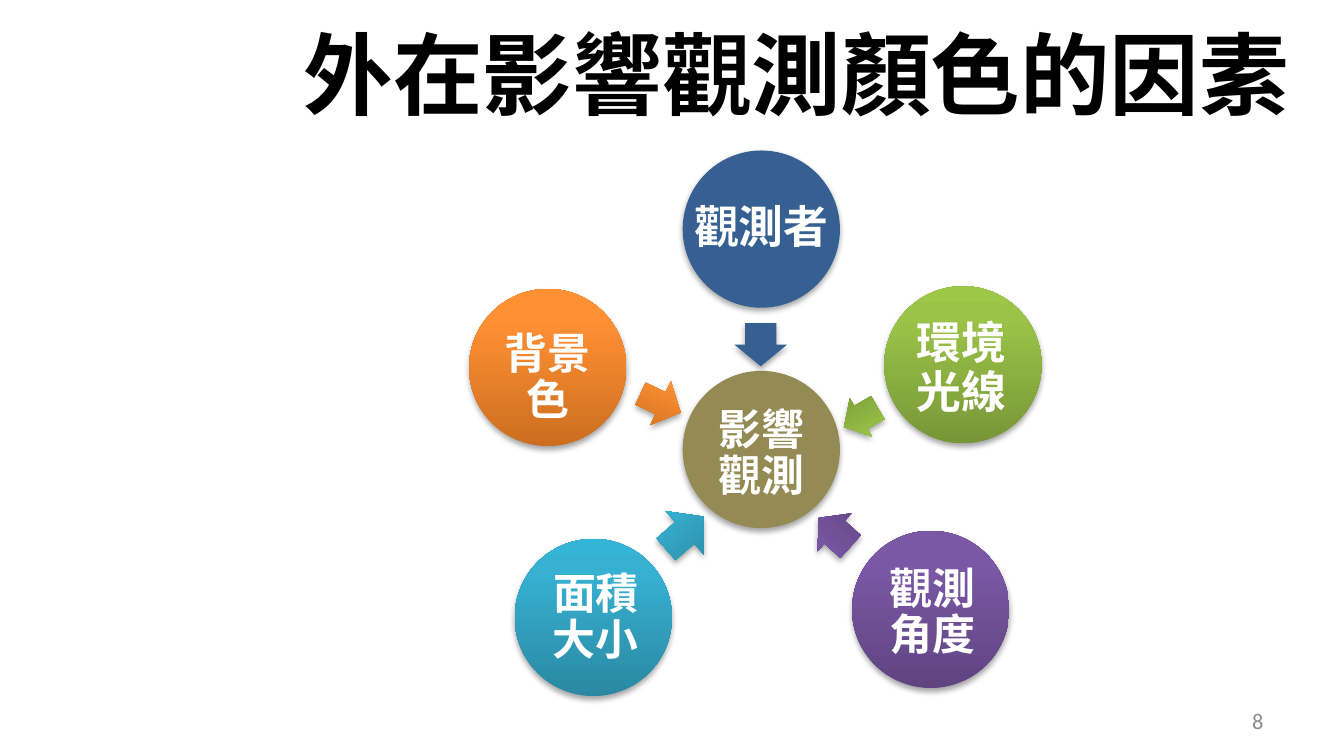
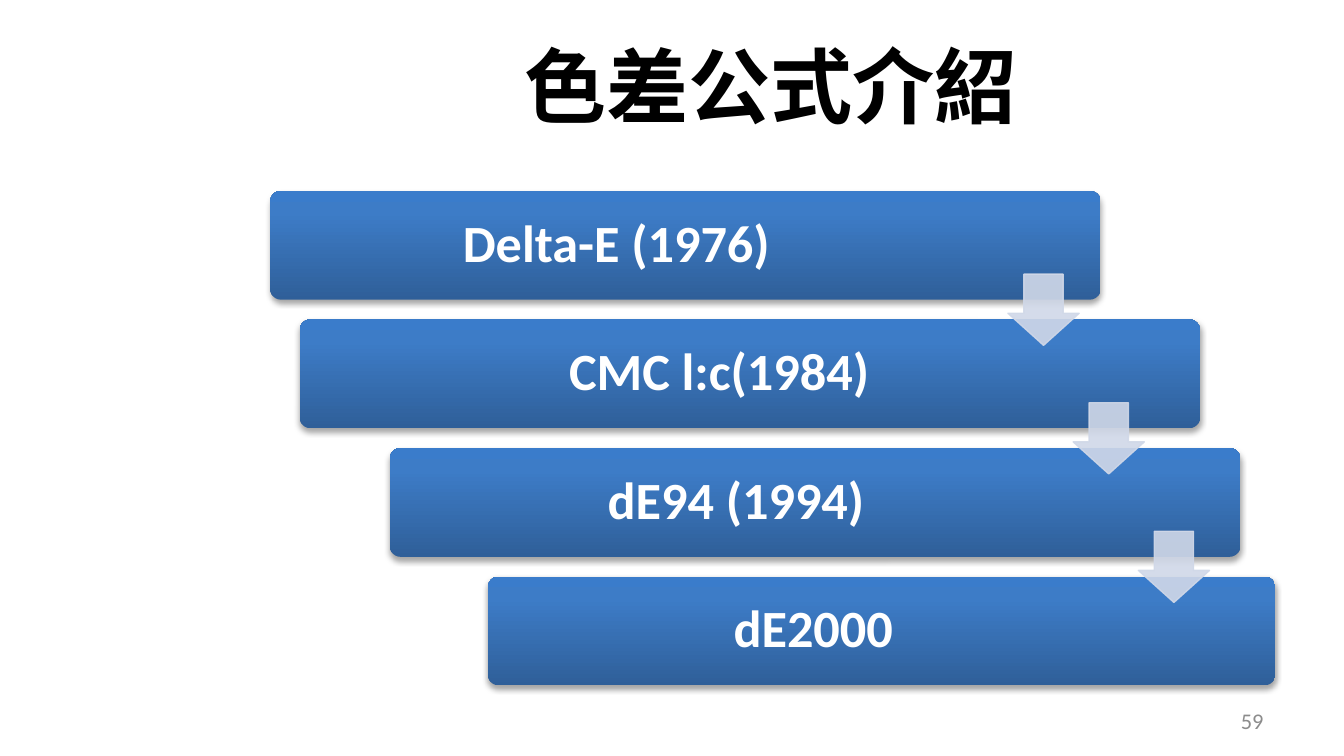
from copy import deepcopy
from collections import namedtuple
from lxml import etree
from pptx import Presentation, util as u
from pptx.dml.color import RGBColor
from pptx.enum import shapes, text
from pptx.oxml import ns

Box = namedtuple("Box", "x y w h")
Node = namedtuple("Node", "label x y fill size text_box")
Arrow = namedtuple("Arrow", "x y w h rotation fill neck")
Step = namedtuple("Step", "label x w text_w pad_left pad_right")

CELL = u.Inches(0.1)
SLIDE_W, SLIDE_H = 100, 56.25
CJK, LATIN = "Noto Sans CJK SC", "Calibri"

BLACK = RGBColor(0x00, 0x00, 0x00)
WHITE = RGBColor(0xFF, 0xFF, 0xFF)
GRAY = RGBColor(0x8C, 0x8C, 0x8C)
OLIVE = RGBColor(0x94, 0x8A, 0x54)
NAVY = RGBColor(0x37, 0x60, 0x92)
PALE = RGBColor(0xD0, 0xD8, 0xE8)
GREEN = (RGBColor(0x77, 0x97, 0x37), RGBColor(0x9B, 0xC3, 0x48), RGBColor(0x9D, 0xC7, 0x46))
PURPLE = (RGBColor(0x5F, 0x44, 0x80), RGBColor(0x7B, 0x58, 0xA6), RGBColor(0x7C, 0x57, 0xA8))
TEAL = (RGBColor(0x2A, 0x88, 0xA2), RGBColor(0x37, 0xB1, 0xD2), RGBColor(0x34, 0xB4, 0xD6))
ORANGE = (RGBColor(0xCC, 0x6E, 0x20), RGBColor(0xFF, 0x90, 0x34), RGBColor(0xFF, 0x91, 0x36))
BLUE = (RGBColor(0x2F, 0x5F, 0x99), RGBColor(0x3D, 0x7C, 0xC7), RGBColor(0x3A, 0x7C, 0xCB))
STOPS = (0, 0.8, 1)

FACTORS_BOX = Box(34.9, 11.2, 42.6, 40.6)
STEPS_BOX = Box(20.1, 14.2, 74.8, 36.8)
NUMBER_BOX = Box(71.7, 52.1, 23.3, 3)

CIRCLE = 11.7
FACTORS = [
    Node("影響觀測", 21.75, 22.25, OLIVE, 23, Box(0, 0.4, 8.3, 8.3)),
    Node("觀測者", 21.75, 5.85, NAVY, 24, Box(0, 0, 11.7, 9.5)),
    Node("環境 光線", 36.75, 15.95, GREEN, 24, Box(-0.1, 0.35, 8.5, 11.6)),
    Node("觀測角度", 34.35, 34.15, PURPLE, 23, Box(0.15, 0.3, 9.5, 9.5)),
    Node("面積大小", 9.25, 34.75, TEAL, 23, Box(0.2, 0.1, 8.3, 8.3)),
    Node("背景色", 5.85, 16.15, ORANGE, 23, Box(0, 0.8, 9.1, 7.9)),
]
ARROWS = [
    Arrow(21.7, 14.45, 3.2, 3.9, 90, NAVY, 0.6),
    Arrow(29.15, 19.85, 2.9, 3.3, 150, GREEN, 0.6),
    Arrow(27.2, 28.4, 3.2, 3.8, 221.9, PURPLE, 0.6),
    Arrow(16.05, 28.45, 3.7, 4.3, 318.8, TEAL, 0.5),
    Arrow(14.25, 18.8, 3.3, 3.6, 25.1, ORANGE, 0.5),
]
STEPS = [
    Step("Delta-E (1976)", 0, 61.8, 51.9, 0, 0.9),
    Step("CMC l:c(1984)", 2.2, 67, 54.9, 7, 0),
    Step("dE94 (1994)", 8.9, 63.3, 51.9, 0, 0.9),
    Step("dE2000", 16.2, 58.6, 47.9, 0, 0),
]


def cells(*lengths):
    """Turn lengths in grid cells into EMU."""
    return [u.Emu(round(n * CELL)) for n in lengths]


def centred(x, y, w, h):
    """Return the box of the given size around a centre."""
    return Box(x - w / 2, y - h / 2, w, h)


def format_text(tf, size, color, font, bold=True):
    """Format every run of a text frame."""
    for p in tf.paragraphs:
        for r in p.runs:
            r.font.size, r.font.bold, r.font.name = u.Pt(size), bold, font
            r.font.color.rgb = color
            ea = etree.SubElement(r._r.get_or_add_rPr(), ns.qn("a:ea"))
            ea.set("typeface", font)


def paint(sp, fill):
    """Fill a shape with one colour or with a gradient rising from the bottom."""
    if isinstance(fill, RGBColor):
        sp.fill.solid()
        sp.fill.fore_color.rgb = fill
        return
    sp.fill.gradient()
    sp.fill.gradient_angle = 90
    stops = sp._element.spPr.find(".//" + ns.qn("a:gsLst"))
    stops.insert(1, deepcopy(stops[0]))
    for stop, color, position in zip(sp.fill.gradient_stops, fill, STOPS):
        stop.color.rgb = color
        stop.position = position


def add_shadow(sp):
    """Give a shape a soft shadow below it."""
    effects = sp._element.spPr.find(ns.qn("a:effectLst"))
    shadow = etree.SubElement(effects, ns.qn("a:outerShdw"), blurRad="40000",
                              dist="23000", dir="5400000", rotWithShape="0")
    color = etree.SubElement(shadow, ns.qn("a:srgbClr"), val="000000")
    etree.SubElement(color, ns.qn("a:alpha"), val="35000")


def add_solid(slide, kind, box, fill, adjust=(), shadow=True):
    """Add a filled preset shape without an outline."""
    sp = slide.shapes.add_shape(kind, *cells(*box))
    sp.shadow.inherit = False
    sp.line.fill.background()
    paint(sp, fill)
    for i, value in enumerate(adjust):
        sp.adjustments[i] = value
    if shadow:
        add_shadow(sp)
    return sp


def add_label(slide, box, label, size, font, inset, pads=(0, 0)):
    """Add a centred white label."""
    tf = slide.shapes.add_textbox(*cells(*box)).text_frame
    tf.word_wrap = True
    tf.vertical_anchor = text.MSO_ANCHOR.MIDDLE
    tf.margin_top, tf.margin_bottom = cells(inset, inset)
    tf.margin_left, tf.margin_right = cells(*(inset + pad for pad in pads))
    tf.text = label
    p = tf.paragraphs[0]
    p.alignment = text.PP_ALIGN.CENTER
    p.line_spacing = 0.9
    format_text(tf, size, WHITE, font)


def add_page(prs, title, box, size, number):
    """Add a slide with its title and slide number."""
    slide = prs.slides.add_slide(prs.slide_layouts[5])
    sp = slide.shapes.title
    sp.left, sp.top, sp.width, sp.height = cells(*box)
    tf = sp.text_frame
    tf.text = title
    tf.word_wrap = False
    tf.auto_size = text.MSO_AUTO_SIZE.NONE
    tf.vertical_anchor = text.MSO_ANCHOR.TOP
    tf.paragraphs[0].alignment = text.PP_ALIGN.LEFT
    format_text(tf, size, BLACK, CJK)

    tf = slide.shapes.add_textbox(*cells(*NUMBER_BOX)).text_frame
    tf.text = number
    tf.word_wrap = True
    tf.vertical_anchor = text.MSO_ANCHOR.MIDDLE
    tf.paragraphs[0].alignment = text.PP_ALIGN.RIGHT
    format_text(tf, 12, GRAY, LATIN, bold=False)
    return slide


def add_factors(slide, box):
    """Draw the hub, its five factors and the arrows pointing inwards."""
    for node in FACTORS:
        x, y = box.x + node.x, box.y + node.y
        add_solid(slide, shapes.MSO_SHAPE.OVAL, centred(x, y, CIRCLE, CIRCLE), node.fill)
        area = node.text_box
        add_label(slide, centred(x + area.x, y + area.y, area.w, area.h),
                  node.label, node.size, CJK, 0.3)
    for arrow in ARROWS:
        area = centred(box.x + arrow.x, box.y + arrow.y, arrow.w, arrow.h)
        sp = add_solid(slide, shapes.MSO_SHAPE.RIGHT_ARROW, area, arrow.fill, (arrow.neck, 0.5))
        sp.rotation = arrow.rotation


def add_steps(slide, box):
    """Draw the staggered bars and the arrows leading from each to the next."""
    bar_h, arrow_size = 8.1, 5.3
    pitch = (box.h - bar_h) / (len(STEPS) - 1)
    for i, step in enumerate(STEPS):
        x, y = box.x + step.x, box.y + i * pitch
        add_solid(slide, shapes.MSO_SHAPE.ROUNDED_RECTANGLE,
                  Box(x, y, step.w, bar_h), BLUE, (0.1,))
        add_label(slide, Box(x + 0.25, y + 0.25, step.text_w, bar_h - 0.5), step.label,
                  28, LATIN, 1.2, (step.pad_left, step.pad_right))
    for i in range(len(STEPS) - 1):
        area = Box(box.x + 54.9 + i * 4.85, box.y + 6.2 + i * pitch, arrow_size, arrow_size)
        sp = add_solid(slide, shapes.MSO_SHAPE.DOWN_ARROW, area, PALE, (0.55, 0.45), False)
        sp.line.color.rgb = PALE
        sp.line.width = u.Pt(0.75)
        for color in sp._element.spPr.iter(ns.qn("a:srgbClr")):
            etree.SubElement(color, ns.qn("a:alpha"), val="90000")


def main():
    """Build and save the slides."""
    prs = Presentation()
    prs.slide_width, prs.slide_height = cells(SLIDE_W, SLIDE_H)
    slide = add_page(prs, "外在影響觀測顏色的因素", Box(21.6, 0.9, 76.1, 9.1), 48, "8")
    add_factors(slide, FACTORS_BOX)
    slide = add_page(prs, "色差公式介紹", Box(38, 2.1, 39, 8.4), 44, "59")
    add_steps(slide, STEPS_BOX)
    prs.save("out.pptx")


if __name__ == "__main__":
    main()
